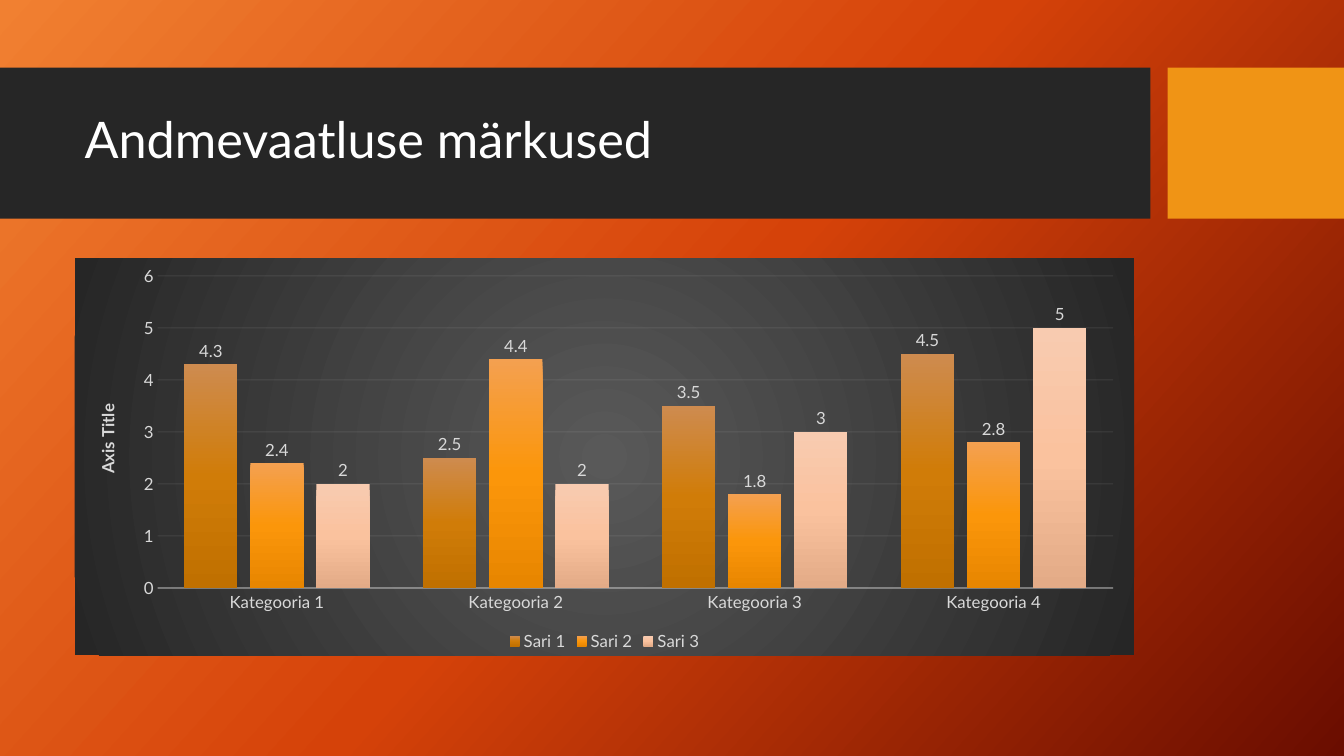
from dataclasses import dataclass

import pptx
import pptx.chart.data
import pptx.dml.color
import pptx.enum.chart
import pptx.enum.shapes
import pptx.enum.text
import pptx.oxml
import pptx.oxml.ns
import pptx.util
from pptx.util import Inches

FONT = "Lato"
COLORS = {
    "band": "262626",
    "accent": "F09415",
    "title": "FFFFFF",
    "chart_text": "D9D9D9",
    "chart_line": "F2F2F2",
}
CATEGORIES = [f"Kategooria {number}" for number in range(1, 5)]
CIRCLE = (
    '<a:path path="circle">'
    '<a:fillToRect l="50000" t="50000" r="50000" b="50000"/></a:path>'
)


@dataclass(frozen=True)
class Block:
    left: float
    width: float
    color: str


@dataclass(frozen=True)
class Sari:
    name: str
    values: tuple[float, ...]
    gradient: tuple[str, ...]


BLOCKS = (
    Block(0, 11.41, COLORS["band"]),
    Block(11.58, 1.75, COLORS["accent"]),
)
SERIES = (
    Sari("Sari 1", (4.3, 2.5, 3.5, 4.5), ("CE8B4F", "D07C08", "C07000")),
    Sari("Sari 2", (2.4, 4.4, 1.8, 2.8), ("F4A050", "FB960A", "E88600")),
    Sari("Sari 3", (2, 2, 3, 5), ("F8CBB0", "FAC29E", "E3AB87")),
)


def rgb(color: str) -> pptx.dml.color.RGBColor:
    return pptx.dml.color.RGBColor.from_string(color)


def linear(degrees: int) -> str:
    return f'<a:lin ang="{degrees * 60000}" scaled="0"/>'


def gradient_fill(colors: tuple[str, ...], direction: str):
    step = 100000 // (len(colors) - 1)
    stops = "".join(
        f'<a:gs pos="{index * step}"><a:srgbClr val="{color}"/></a:gs>'
        for index, color in enumerate(colors)
    )
    return pptx.oxml.parse_xml(
        f'<a:gradFill {pptx.oxml.ns.nsdecls("a")} rotWithShape="1">'
        f"<a:gsLst>{stops}</a:gsLst>{direction}</a:gradFill>"
    )


def replace_fill(solid, colors: tuple[str, ...], direction: str) -> None:
    solid.getparent().replace(solid, gradient_fill(colors, direction))


def set_alpha(color, percent: int) -> None:
    color.append(pptx.oxml.parse_xml(
        f'<a:alpha {pptx.oxml.ns.nsdecls("a")} val="{percent * 1000}"/>'
    ))


def style_font(font, *, size: float, color: str, bold: bool = False) -> None:
    font.name = FONT
    font.size = pptx.util.Pt(size)
    font.bold = bold
    font.color.rgb = rgb(color)


def write_text(frame, text: str, *, size: float, color: str,
               bold: bool = False, line_spacing: float | None = None) -> None:
    paragraph = frame.paragraphs[0]
    if line_spacing:
        paragraph.line_spacing = line_spacing
    run = paragraph.add_run()
    run.text = text
    style_font(run.font, size=size, color=color, bold=bold)


def draw_block(slide, block: Block) -> None:
    shape = slide.shapes.add_shape(
        pptx.enum.shapes.MSO_SHAPE.RECTANGLE,
        Inches(block.left), Inches(0.67), Inches(block.width), Inches(1.5),
    )
    shape.shadow.inherit = False
    shape.fill.solid()
    shape.fill.fore_color.rgb = rgb(block.color)
    shape.line.fill.background()


def draw_title(slide) -> None:
    frame = slide.shapes.add_textbox(
        Inches(0.74), Inches(0.82), Inches(10.51), Inches(1.18)
    ).text_frame
    frame.word_wrap = True
    frame.vertical_anchor = pptx.enum.text.MSO_ANCHOR.MIDDLE
    write_text(frame, "Andmevaatluse märkused", size=36,
               color=COLORS["title"], line_spacing=0.9)


def style_axes(chart) -> None:
    category_axis, value_axis = chart.category_axis, chart.value_axis
    for axis in (category_axis, value_axis):
        axis.major_tick_mark = pptx.enum.chart.XL_TICK_MARK.NONE
        axis.minor_tick_mark = pptx.enum.chart.XL_TICK_MARK.NONE
        style_font(axis.tick_labels.font, size=12, color=COLORS["chart_text"])

    value_axis.minimum_scale, value_axis.maximum_scale = 0, 6
    value_axis.major_unit = 1
    value_axis.format.line.fill.background()
    value_axis.has_major_gridlines = True
    write_text(value_axis.axis_title.text_frame, "Axis Title", size=12,
               color=COLORS["chart_text"], bold=True)

    lines = (
        (category_axis.format.line, 1, 54, "c:catAx/c:spPr"),
        (value_axis.major_gridlines.format.line, 0.75, 10,
         "c:valAx/c:majorGridlines"),
    )
    for line, width, opacity, place in lines:
        line.color.rgb = rgb(COLORS["chart_line"])
        line.width = pptx.util.Pt(width)
        set_alpha(chart.element.xpath(f".//{place}//a:srgbClr")[0], opacity)


def draw_chart(slide) -> None:
    data = pptx.chart.data.CategoryChartData()
    data.categories = CATEGORIES
    for sari in SERIES:
        data.add_series(sari.name, sari.values)
    chart = slide.shapes.add_chart(
        pptx.enum.chart.XL_CHART_TYPE.COLUMN_CLUSTERED,
        Inches(0.74), Inches(2.56), Inches(10.51), Inches(3.94), data,
    ).chart
    chart.has_title = False
    style_font(chart.font, size=10, color=COLORS["title"])

    area = pptx.oxml.parse_xml(f'<c:spPr {pptx.oxml.ns.nsdecls("c", "a")}>'
                               "<a:ln><a:noFill/></a:ln></c:spPr>")
    area.insert(0, gradient_fill(("595959", "262626"), CIRCLE))
    chart.element.xpath("c:chart")[0].addnext(area)

    plot = chart.plots[0]
    plot.vary_by_categories = False
    plot.gap_width, plot.overlap = 100, -24
    for sari, columns in zip(SERIES, plot.series):
        columns.format.fill.solid()
        solid = chart.element.xpath(".//c:ser/c:spPr/a:solidFill")[0]
        replace_fill(solid, sari.gradient, linear(90))
        labels = columns.data_labels
        labels.show_value = True
        labels.position = pptx.enum.chart.XL_LABEL_POSITION.OUTSIDE_END
        style_font(labels.font, size=12, color=COLORS["chart_text"])

    style_axes(chart)
    chart.has_legend = True
    chart.legend.position = pptx.enum.chart.XL_LEGEND_POSITION.BOTTOM
    chart.legend.include_in_layout = False
    style_font(chart.legend.font, size=12, color=COLORS["chart_text"])


def main() -> None:
    presentation = pptx.Presentation()
    presentation.slide_width = Inches(13.33)
    presentation.slide_height = Inches(7.5)
    slide = presentation.slides.add_slide(presentation.slide_layouts[6])

    slide.background.fill.solid()
    replace_fill(slide.element.xpath(".//p:bgPr/a:solidFill")[0],
                 ("F18031", "D54209", "6A0D00"), linear(42))
    for block in BLOCKS:
        draw_block(slide, block)
    draw_title(slide)
    draw_chart(slide)
    presentation.save("out.pptx")


if __name__ == "__main__":
    main()
